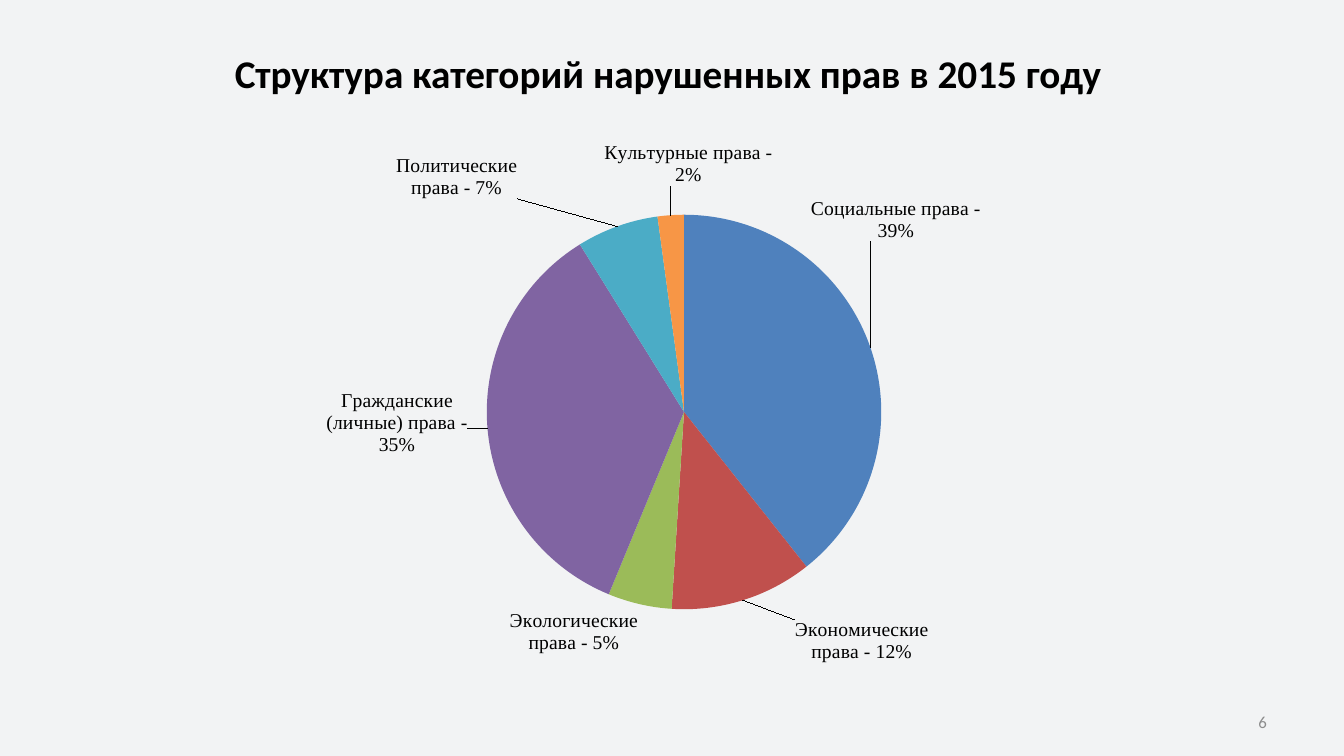
from lxml import etree
from pptx import Presentation
from pptx.chart.data import CategoryChartData
from pptx.dml.color import RGBColor
from pptx.enum.chart import XL_CHART_TYPE as ChartType, XL_LABEL_POSITION as LabelPos
from pptx.enum.text import MSO_ANCHOR as Anchor, PP_ALIGN as Align
from pptx.oxml.ns import qn
from pptx.util import Cm, Pt

BACKGROUND = RGBColor(0xF2, 0xF3, 0xF4)
BLACK = RGBColor(0x00, 0x00, 0x00)
GRAY = RGBColor(0x8C, 0x8C, 0x8C)
BLUE = RGBColor(0x4F, 0x81, 0xBD)
RED = RGBColor(0xC0, 0x50, 0x4D)
GREEN = RGBColor(0x9B, 0xBB, 0x59)
PURPLE = RGBColor(0x80, 0x64, 0xA2)
TEAL = RGBColor(0x4B, 0xAC, 0xC6)
ORANGE = RGBColor(0xF7, 0x96, 0x46)

# category, value, shown share, slice colour, label shift (fractions of the chart)
RIGHTS = [
    ("Социальные права", 1502, "39%", BLUE, (-0.075, -0.17)),
    ("Экономические права", 445, "12%", RED, (0.058, 0.023)),
    ("Экологические права", 200, "5%", GREEN, (0, 0)),
    ("Гражданские (личные) права", 1333, "35%", PURPLE, (-0.016, -0.01)),
    ("Политические права", 256, "7%", TEAL, (-0.113, -0.036)),
    ("Культурные права", 82, "2%", ORANGE, (0.021, -0.038)),
]


def style_font(font, name, size, color, bold=False):
    font.name = name
    font.size = Pt(size)
    font.bold = bold
    font.color.rgb = color


def add_text(slide, text, box, size, color, align, anchor, bold=False):
    tf = slide.shapes.add_textbox(*map(Cm, box)).text_frame
    tf.word_wrap = True
    tf.vertical_anchor = anchor
    tf.margin_bottom = Cm(0.05)
    p = tf.paragraphs[0]
    p.text = text
    p.alignment = align
    style_font(p.runs[0].font, "Calibri", size, color, bold)


def make_layout(**settings):
    """Build a c:layout element with the given manual settings."""
    layout = etree.Element(qn("c:layout"))
    manual = etree.SubElement(layout, qn("c:manualLayout"))
    for name, value in settings.items():
        etree.SubElement(manual, qn(f"c:{name}"), val=str(value))
    return layout


def set_plot_area(chart, x, y, w, h):
    plot_area = chart._chartSpace.chart.plotArea
    for old in plot_area.findall(qn("c:layout")):
        plot_area.remove(old)
    plot_area.insert(0, make_layout(layoutTarget="inner", xMode="edge", yMode="edge",
                                    x=x, y=y, w=w, h=h))


def label_slice(point, text):
    label = point.data_label
    tf = label.text_frame
    tf.word_wrap = True
    p = tf.paragraphs[0]
    p.text = text
    style_font(p.runs[0].font, "Times New Roman", 14, BLACK)
    label.position = LabelPos.OUTSIDE_END


def add_rights_pie(slide, box):
    data = CategoryChartData()
    data.categories = [right[0] for right in RIGHTS]
    data.add_series("Series 1", [right[1] for right in RIGHTS])
    chart = slide.shapes.add_chart(ChartType.PIE, *map(Cm, box), data).chart
    chart.has_title = False
    chart.has_legend = False
    style_font(chart.font, "Calibri", 10, BLACK)
    set_plot_area(chart, 0.198, 0.266, 0.658, 0.646)

    plot = chart.plots[0]
    plot.vary_by_categories = True
    series = plot.series[0]
    labels = series.data_labels
    labels.show_value = labels.show_category_name = labels.show_percentage = True
    labels.position = LabelPos.OUTSIDE_END
    style_font(labels.font, "Times New Roman", 14, BLACK)
    for i, (name, _, share, color, _) in enumerate(RIGHTS):
        point = series.points[i]
        point.format.fill.solid()
        point.format.fill.fore_color.rgb = color
        point.format.line.fill.background()
        label_slice(point, f"{name} - {share}")

    label_elements = series._element.xpath("c:dLbls/c:dLbl")
    for element, (*_, (dx, dy)) in zip(label_elements, RIGHTS):
        element.insert(1, make_layout(x=dx, y=dy))


def main():
    prs = Presentation()
    prs.slide_width, prs.slide_height = Cm(33.87), Cm(19.05)
    slide = prs.slides.add_slide(prs.slide_layouts[6])
    fill = slide.background.fill
    fill.solid()
    fill.fore_color.rgb = BACKGROUND

    add_text(slide, "Структура категорий нарушенных прав в 2015 году",
             (3.33, 0.91, 27, 1.57), 28, BLACK, Align.CENTER, Anchor.BOTTOM, bold=True)
    add_rights_pie(slide, (5.74, 1.32, 21.82, 15.39))
    add_text(slide, "6", (24.28, 17.65, 7.9, 1.02), 12, GRAY, Align.RIGHT, Anchor.MIDDLE)
    prs.save("out.pptx")


if __name__ == "__main__":
    main()
